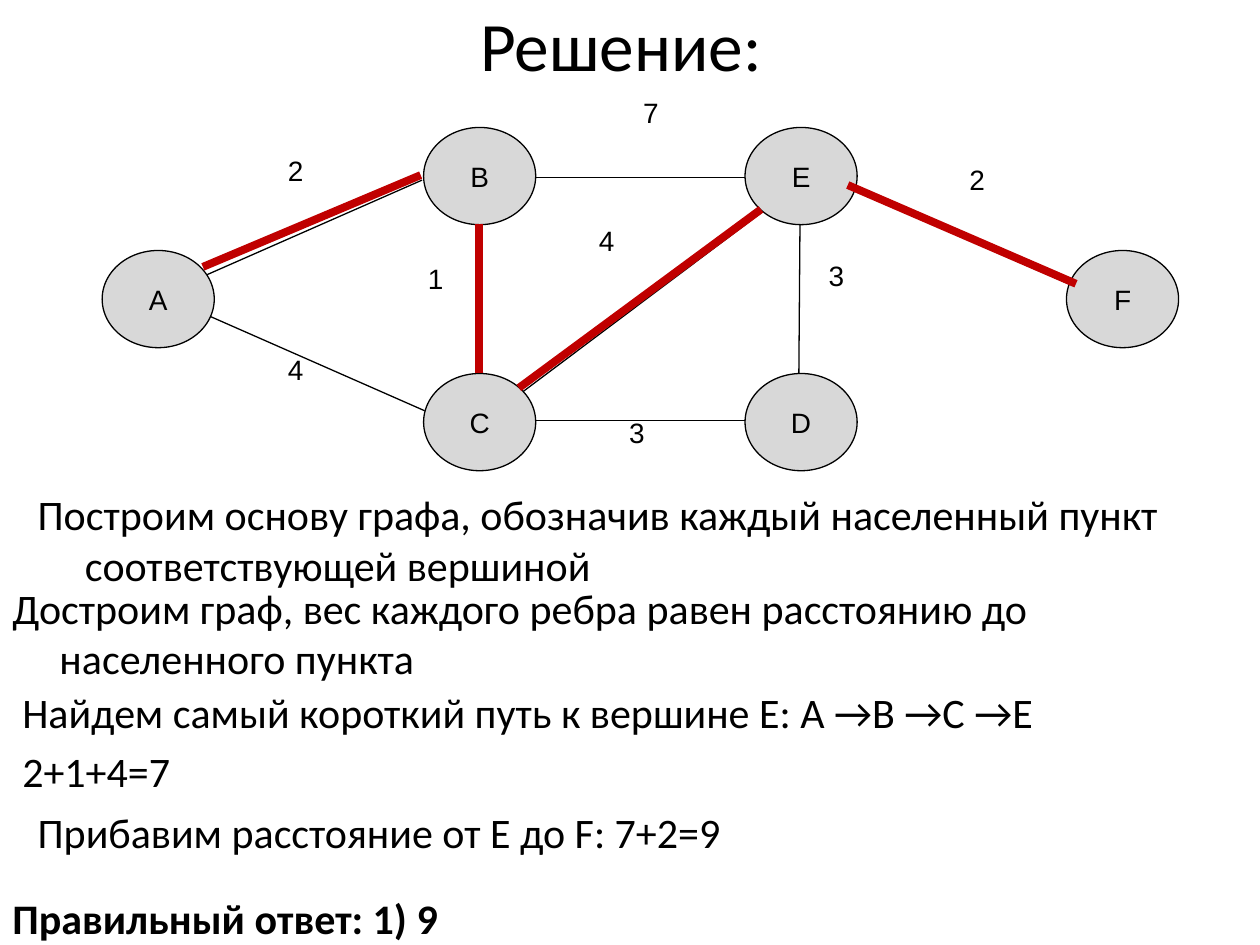
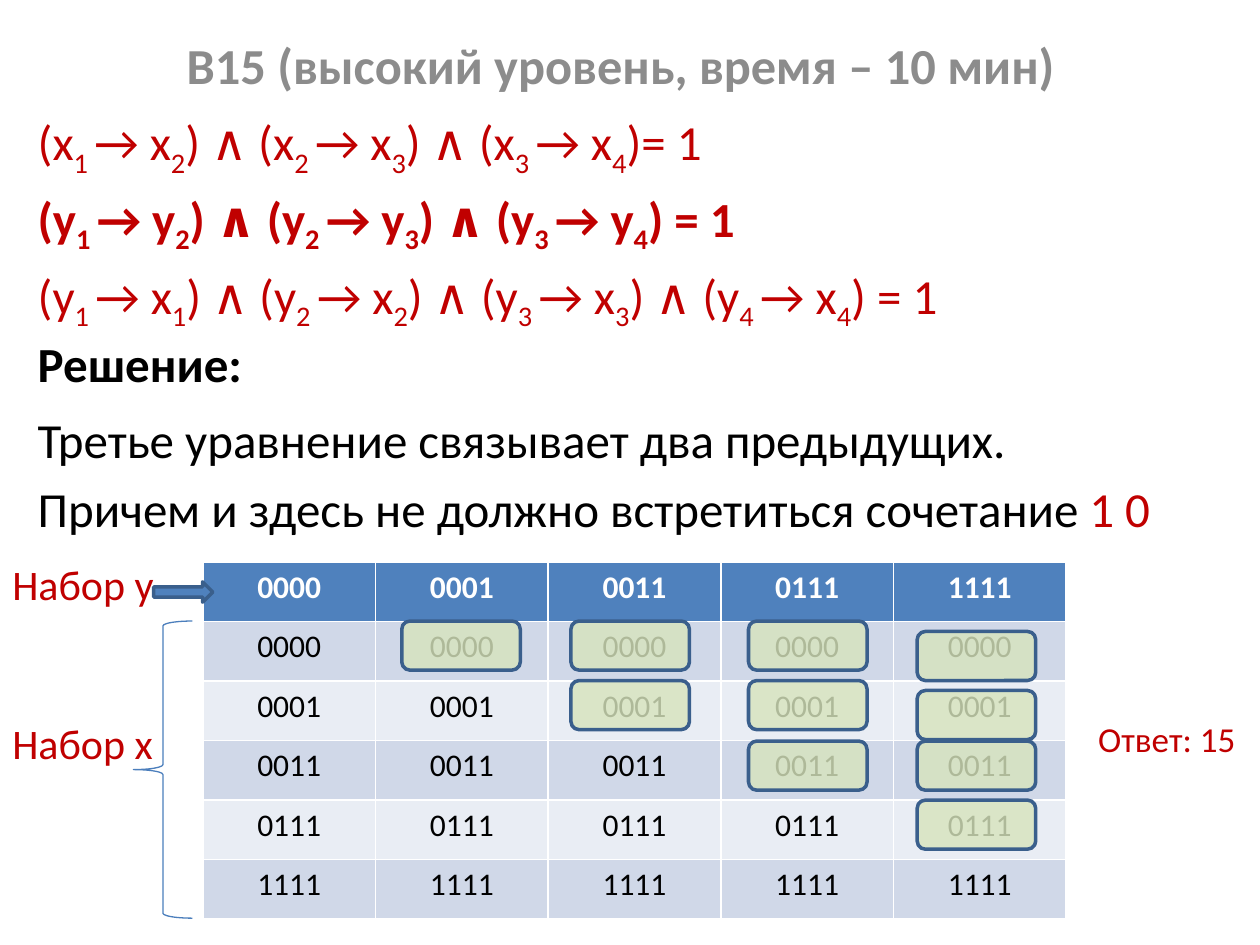
"""Builds two exam solution slides: a shortest path in a graph and a system of logical equations."""
import pptx
import pptx.dml.color
import pptx.enum.shapes
import pptx.enum.text
import pptx.oxml.ns
import pptx.oxml.xmlchemy
import pptx.util

Cm = pptx.util.Cm
Pt = pptx.util.Pt
RGB = pptx.dml.color.RGBColor.from_string
SHAPE = pptx.enum.shapes.MSO_SHAPE
ALIGN = pptx.enum.text.PP_ALIGN
ANCHOR = pptx.enum.text.MSO_ANCHOR
qn = pptx.oxml.ns.qn
new_element = pptx.oxml.xmlchemy.OxmlElement

COLORS = {
    "text": "000000", "title": "8C8C8C", "accent": "C00000", "white": "FFFFFF",
    "node": "D8D8D8", "blue": "4F81BD", "outline": "3A5F8C", "brace": "4B7EBC",
    "band_dark": "D0D8E8", "band_light": "E9EDF4", "rejected": "D7E4BD",
}


def write(frame, *lines, size=24, color="text", font="Calibri", bold=False, align=ALIGN.LEFT,
          anchor=ANCHOR.TOP, hanging=False, spacing=None, inset=None):
    """Writes one paragraph per line; _ lowers the next character, | toggles the accent colour."""
    frame.word_wrap = True
    frame.vertical_anchor = anchor
    if inset is not None:
        frame.margin_left = frame.margin_right = frame.margin_top = frame.margin_bottom = inset
    for number, line in enumerate(lines):
        para = frame.add_paragraph() if number else frame.paragraphs[0]
        para.alignment = align
        para.line_spacing = spacing
        if hanging:
            para.space_before = Pt(0.2 * size)
            properties = para._p.get_or_add_pPr()
            properties.set("marL", str(Cm(0.95)))
            properties.set("indent", str(Cm(-0.95)))
        for index, part in enumerate(line.split("|")):
            first, *rest = part.split("_")
            pieces = [(first, False)]
            for piece in rest:
                cut = 2 if piece[1:2] == " " else 1
                pieces += [(piece[:cut], True), (piece[cut:], False)]
            for text, lowered in pieces:
                if not text:
                    continue
                span = para.add_run()
                span.text = text
                span.font.name = font
                span.font.size = Pt(size)
                span.font.bold = bold
                span.font.color.rgb = RGB(COLORS["accent" if index % 2 else color])
                if lowered:
                    span.font._element.set("baseline", "-25000")


def link(page, x1, y1, x2, y2, color, width):
    """Draws a straight edge of the graph."""
    edge = page.shapes.add_connector(
        pptx.enum.shapes.MSO_CONNECTOR.STRAIGHT, Cm(x1), Cm(y1), Cm(x2), Cm(y2))
    edge.line.color.rgb = RGB(COLORS[color])
    edge.line.width = Pt(width)
    edge._element.spPr.append(new_element("a:effectLst"))


deck = pptx.Presentation()
deck.slide_width, deck.slide_height = Cm(25.4), Cm(19.05)
blank = deck.slide_layouts[6]
title_style = {"align": ALIGN.CENTER, "anchor": ANCHOR.MIDDLE}

page = deck.slides.add_slide(blank)
box = page.shapes.add_textbox(Cm(1.09), Cm(0), Cm(22.86), Cm(1.75))
write(box.text_frame, "Решение:", size=39.6, **title_style)

roads = [
    (3.94, 5.64, 8.51, 3.63), (3.99, 6.27, 8.56, 8.28), (16.97, 3.71, 21.54, 5.72),
    (10.57, 3.58, 15.11, 3.58), (10.57, 8.48, 15.11, 8.48), (9.63, 4.09, 9.63, 8.05),
    (16.13, 4.09, 16.1, 8.05), (15.65, 4.06, 10.03, 8.28),
]
for road in roads:
    link(page, *road, "text", 0.75)

nodes = [("D", 2, 2), ("F", 3, 1), ("A", 0, 1), ("B", 1, 0), ("C", 1, 2), ("E", 2, 0)]
for name, column, row in nodes:
    node = page.shapes.add_shape(
        SHAPE.OVAL, Cm(2.06 + 6.48 * column), Cm(2.57 + 2.48 * row), Cm(2.26), Cm(1.96))
    node.shadow.inherit = False
    node.fill.solid()
    node.fill.fore_color.rgb = RGB(COLORS["node"])
    node.line.color.rgb = RGB(COLORS["text"])
    node.line.width = Pt(0.75)
    write(node.text_frame, name, size=16, font="Arial", **title_style)

weights = [
    ("2", 4.98, 3.1), ("4", 4.98, 7.11), ("7", 12.14, 1.93), ("1", 7.8, 5.28),
    ("3", 11.86, 8.38), ("4", 11.25, 4.5), ("3", 15.88, 5.21), ("2", 18.72, 3.28),
]
for weight, left, top in weights:
    box = page.shapes.add_textbox(Cm(left), Cm(top), Cm(1.96), Cm(1.57))
    write(box.text_frame, weight, size=16, font="Arial", align=ALIGN.CENTER, inset=0)

steps = [
    (0.51, 9.73, 24.21, 2.31, False,
     ["Построим основу графа, обозначив каждый населенный пункт соответствующей вершиной"]),
    (0, 11.61, 25.4, 2.31, False,
     ["Достроим граф, вес каждого ребра равен расстоянию до населенного пункта"]),
    (0.2, 13.72, 24.89, 2.51, False,
     ["Найдем самый короткий путь к вершине Е: A →B →C →E", "2+1+4=7"]),
    (0.51, 16.13, 24.89, 1.27, False, ["Прибавим расстояние от Е до F: 7+2=9"]),
    (0, 17.86, 23.39, 1.19, True, ["Правильный ответ: 1) 9"]),
]
for left, top, width, height, bold, lines in steps:
    box = page.shapes.add_textbox(Cm(left), Cm(top), Cm(width), Cm(height))
    write(box.text_frame, *lines, bold=bold, hanging=True)

shortest_path = [
    (4.09, 5.38, 8.48, 3.53), (9.65, 7.52, 9.65, 4.52),
    (10.46, 7.82, 15.34, 4.22), (17.09, 3.73, 21.69, 5.72),
]
for road in shortest_path:
    link(page, *road, "accent", 4.5)

page = deck.slides.add_slide(blank)
box = page.shapes.add_textbox(Cm(1.09), Cm(0.53), Cm(22.86), Cm(1.55))
write(box.text_frame, "B15 (высокий уровень, время – 10 мин)", size=28.8, color="title",
      bold=True, **title_style)

box = page.shapes.add_textbox(Cm(0.51), Cm(2.13), Cm(23.19), Cm(4.6))
equations = [
    ("(x_1 → x_2) ∧ (x_2 → x_3) ∧ (x_3 → x_4)= 1", False),
    ("(у_1 → у_2) ∧ (у_2 → у_3) ∧ (у_3 → у_4) = 1", True),
    ("(y_1 → x_1) ∧ (y_2 → x_2) ∧ (y_3 → x_3) ∧ (y_4 → x_4) = 1", False),
]
write(box.text_frame, *[text for text, bold in equations], size=28, color="accent", hanging=True)
for para, (text, bold) in zip(box.text_frame.paragraphs, equations):
    for span in para.runs:
        span.font.bold = bold

box = page.shapes.add_textbox(Cm(0.51), Cm(6.73), Cm(23.19), Cm(1.4))
write(box.text_frame, "Решение:", size=28, bold=True, hanging=True, spacing=0.9)
box = page.shapes.add_textbox(Cm(0.51), Cm(8.13), Cm(24.21), Cm(3))
write(box.text_frame, "Третье уравнение связывает два предыдущих.",
      "Причем и здесь не должно встретиться сочетание |1 0|", size=28, hanging=True)

codes = ["0000", "0001", "0011", "0111", "1111"]
table = page.shapes.add_table(6, 5, Cm(4.09), Cm(11.33), Cm(17.4), Cm(7.2)).table
for column in table.columns:
    column.width = Cm(3.48)
for row_number, row in enumerate(table.rows):
    row.height = Cm(1.2)
    header = row_number == 0
    band = "blue" if header else "band_dark" if row_number % 2 else "band_light"
    for column_number, cell in enumerate(row.cells):
        cell.fill.solid()
        cell.fill.fore_color.rgb = RGB(COLORS[band])
        code = codes[column_number if header else row_number - 1]
        write(cell.text_frame, code, size=18, color="white" if header else "text",
              bold=header, align=ALIGN.CENTER)

labels = [("Набор у", 0, 11.13, 24), ("Набор х", 0, 14.33, 24), ("Ответ: 15", 21.89, 14.33, 20)]
for text, left, top, size in labels:
    box = page.shapes.add_textbox(Cm(left), Cm(top), Cm(3.5), Cm(1.2))
    write(box.text_frame, text, size=size, color="accent")

marks = [
    (SHAPE.RIGHT_ARROW, 3.1, 11.73, 1.19, 0.41, "blue", "outline", 2),
    (SHAPE.LEFT_BRACE, 2.69, 12.52, 1.19, 5.99, None, "brace", 0.75),
]
rejected_tops = {
    8.1: [12.52], 11.51: [12.52, 13.72], 15.09: [12.52, 13.72, 14.94],
    18.49: [12.73, 13.92, 14.94, 16.13],
}
for left, tops in rejected_tops.items():
    for top in tops:
        marks.append((SHAPE.ROUNDED_RECTANGLE, left, top, 2.39, 0.99, "rejected", "outline", 2))
for kind, left, top, width, height, fill, line, weight in marks:
    mark = page.shapes.add_shape(kind, Cm(left), Cm(top), Cm(width), Cm(height))
    mark.shadow.inherit = False
    mark.line.color.rgb = RGB(COLORS[line])
    mark.line.width = Pt(weight)
    if fill is None:
        mark.fill.background()
        continue
    mark.fill.solid()
    mark.fill.fore_color.rgb = RGB(COLORS[fill])
    if fill == "rejected":
        alpha = new_element("a:alpha")
        alpha.set("val", "81000")
        mark._element.spPr.find(qn("a:solidFill")).find(qn("a:srgbClr")).append(alpha)

deck.save("out.pptx")
